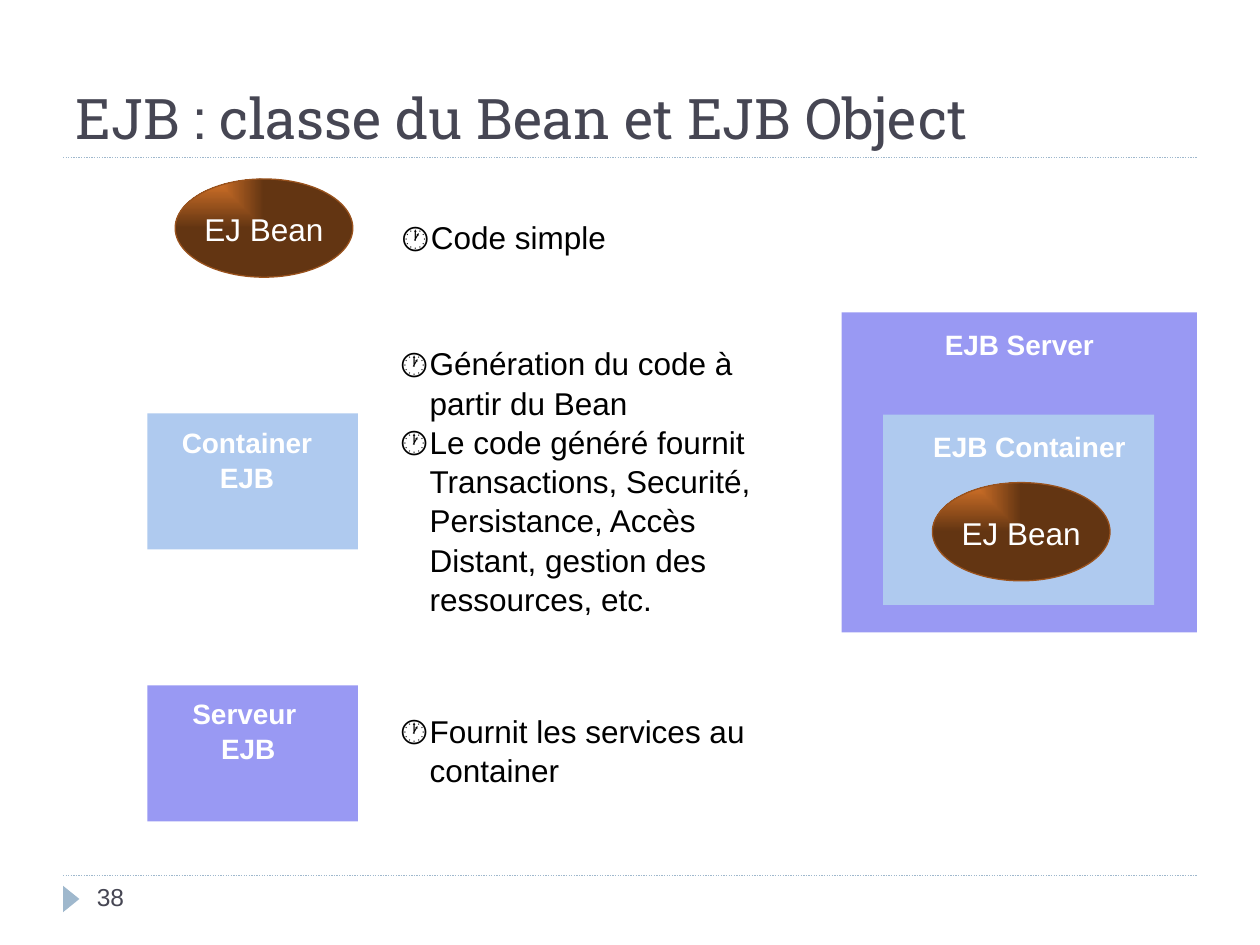
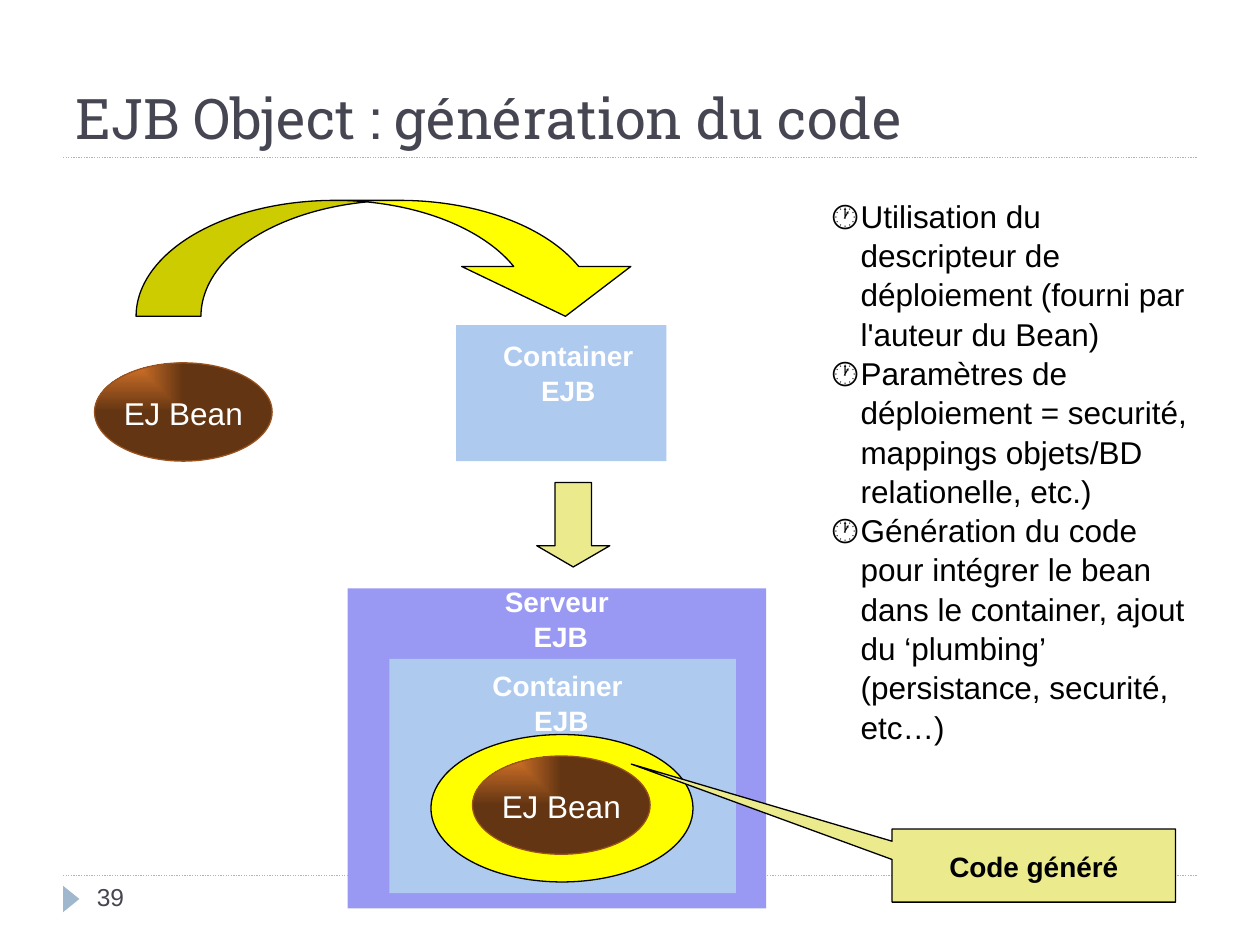
from lxml import etree
from pptx import Presentation
from pptx import util as u
from pptx.dml.color import RGBColor
from pptx.enum import dml, shapes, text
from pptx.oxml import ns

HUE = {
    "rule": "9FB8CD", "title": "464653", "black": "000000", "white": "FFFFFF",
    "server": "9999F3", "box": "AFCAEF", "glow": "D77429", "bean": "633512",
    "rim": "99521D", "yellow": "FFFF00", "cream": "EBEB8D",
}
FORM = shapes.MSO_SHAPE
ALIGN = text.PP_ALIGN
ANCHOR = text.MSO_ANCHOR
RGB = {name: RGBColor.from_string(code) for name, code in HUE.items()}

prs = Presentation()
prs.slide_width = u.Inches(10)
prs.slide_height = u.Inches(7.5)
COLS = 100
CELL = prs.slide_width / COLS


def grid(*cells):
    return [u.Emu(round(cell * CELL)) for cell in cells]


def write(shape, words, size, ink, bold=False, align=ALIGN.LEFT,
          anchor=ANCHOR.TOP, face="Arial", wrap=True, lead=1.0):
    frame = shape.text_frame
    frame.text = words
    frame.word_wrap = wrap
    frame.auto_size = text.MSO_AUTO_SIZE.NONE
    frame.vertical_anchor = anchor
    for para in frame.paragraphs:
        para.alignment = align
        para.line_spacing = lead
        para.space_before = u.Pt(0)
        for run in para.runs:
            run.font.name = face
            run.font.size = u.Pt(size)
            run.font.bold = bold
            run.font.color.rgb = RGB[ink]


BEAN = (14.1, 7.8)
BOX = (16.7, 10.8)
LIST = 31.6

pages = [
    {
        "layout": 4,
        "title": "EJB : classe du Bean et EJB Object",
        "lists": [
            ((30.9, 16.7, 18.7, 4), ["Code simple"]),
            ((30.8, 26.7, LIST, 23.7), [
                "Génération du code à partir du Bean",
                "Le code généré fournit Transactions, Securité, Persistance, "
                "Accès Distant, gestion des ressources, etc."]),
            ((30.8, 55.9, LIST, 7), ["Fournit les services au container"]),
        ],
        "forms": [
            (FORM.RECTANGLE, (66.8, 24.8, 28.2, 25.4), "server", None, []),
            (FORM.RECTANGLE, (70.1, 32.9, 21.5, 15.1), "box", None, []),
            (FORM.RECTANGLE, (11.7, 32.8, *BOX), "box", None, []),
            (FORM.RECTANGLE, (11.7, 54.4, *BOX), "server", None, []),
        ],
        "labels": [
            ((73.1, 25.4, 15.6, 3.6), "EJB Server"),
            ((72.5, 33.5, 18.4, 3.6), "EJB Container"),
            ((12.5, 33.2, 14.2, 6.3), "Container EJB"),
            ((14.2, 54.7, 10.4, 6.3), "Serveur\v EJB"),
        ],
        "beans": [(74, 38.3), (13.9, 14.2)],
        "notes": [],
    },
    {
        "layout": 1,
        "title": "EJB Object : génération du code",
        "lists": [
            ((65, 15, LIST, 40.5), [
                "Utilisation du descripteur de déploiement "
                "(fourni par l'auteur du Bean)",
                "Paramètres de déploiement = securité, "
                "mappings objets/BD relationelle, etc.)",
                "Génération du code pour intégrer le bean dans le container, "
                "ajout du ‘plumbing’ (persistance, securité, etc…)"]),
        ],
        "forms": [
            (FORM.RECTANGLE, (27.6, 46.7, 33.2, 25.4), "server", None, []),
            (FORM.RECTANGLE, (30.9, 52.3, 27.5, 18.6), "box", None, []),
            (FORM.OVAL, (34.2, 58.3, 20.8, 11.7), "yellow", "black", []),
            (FORM.RECTANGLE, (36.2, 25.8, *BOX), "box", None, []),
            (FORM.DOWN_ARROW, (42.6, 38.3, 5.8, 6.7), "cream", "black",
             [0.5, 0.29]),
            (FORM.CURVED_DOWN_ARROW, (10.8, 15.9, 40.8, 9.2), "yellow", "black",
             [0.56, 1.46, 0.43]),
        ],
        "labels": [
            ((35, 45.8, 18.4, 6.3), "Serveur\n EJB"),
            ((32.5, 52.5, 23.5, 6.3), "Container\n EJB"),
            ((38, 26.3, 14.2, 6.3), "Container EJB"),
        ],
        "beans": [(37.5, 60), (7.5, 28.8)],
        "notes": [((70.8, 65.8, 22.5, 5.8), "Code généré", [-1.42, -1.39])],
    },
]

for num, page in enumerate(pages, 38):
    slide = prs.slides.add_slide(prs.slide_layouts[page["layout"]])
    draw = slide.shapes

    for row in (12.5, 69.5):
        rule = draw.add_connector(shapes.MSO_CONNECTOR.STRAIGHT,
                                  *grid(5, row, 95, row))
        rule.line.color.rgb = RGB["rule"]
        rule.line.width = u.Pt(0.75)
        rule.line.dash_style = dml.MSO_LINE.ROUND_DOT
        etree.SubElement(rule.element.spPr, ns.qn("a:effectLst"))

    mark = draw.add_shape(FORM.ISOSCELES_TRIANGLE, *grid(4.6, 70.7, 2.1, 1.3))
    mark.rotation = 90
    mark.shadow.inherit = False
    mark.fill.solid()
    mark.fill.fore_color.rgb = RGB["rule"]
    mark.line.fill.background()

    foot = draw.add_textbox(*grid(6.7, 69.5, 21.7, 4))
    write(foot, str(num), 14, "title")

    head = draw.title
    head.left, head.top, head.width, head.height = grid(5, 2.5, 90, 10)
    write(head, page["title"], 32, "title", anchor=ANCHOR.BOTTOM,
          face="Roboto Slab")

    slots = [slot for slot in slide.placeholders
             if slot.placeholder_format.idx > 0]
    for slot, (area, items) in zip(slots, page["lists"]):
        slot.left, slot.top, slot.width, slot.height = grid(*area)
        write(slot, "\n".join(items), 18, "black", lead=1.04)
        for para in slot.text_frame.paragraphs:
            props = para._p.get_or_add_pPr()
            props.set("marL", str(u.Inches(0.23)))
            props.set("indent", str(-u.Inches(0.23)))
            etree.SubElement(props, ns.qn("a:buFont"), typeface="Arial")
            etree.SubElement(props, ns.qn("a:buChar"), char="🕐")
    for slot in slots[len(page["lists"]):]:
        slot.element.getparent().remove(slot.element)

    for kind, area, fill, edge, bends in page["forms"]:
        form = draw.add_shape(kind, *grid(*area))
        form.shadow.inherit = False
        form.fill.solid()
        form.fill.fore_color.rgb = RGB[fill]
        if edge:
            form.line.color.rgb = RGB[edge]
            form.line.width = u.Pt(0.75)
        else:
            form.line.fill.background()
        for pos, bend in enumerate(bends):
            form.adjustments[pos] = bend

    for area, words in page["labels"]:
        label = draw.add_textbox(*grid(*area))
        write(label, words, 16, "white", True, ALIGN.CENTER, lead=1.04)

    for spot in page["beans"]:
        bean = draw.add_shape(FORM.OVAL, *grid(*spot, *BEAN))
        bean.shadow.inherit = False
        bean.fill.gradient()
        for stop, hue, place in zip(bean.fill.gradient_stops,
                                    ("glow", "bean"), (0, 1)):
            stop.color.rgb = RGB[hue]
            stop.position = place
        grad = bean.element.spPr.find(ns.qn("a:gradFill"))
        sweep = etree.Element(ns.qn("a:path"), {"path": "rect"})
        etree.SubElement(sweep, ns.qn("a:fillToRect"), r="100000", b="100000")
        grad.replace(grad.find(ns.qn("a:lin")), sweep)
        bean.line.color.rgb = RGB["rim"]
        bean.line.width = u.Pt(0.75)
        write(bean, "EJ Bean", 18, "white", align=ALIGN.CENTER,
              anchor=ANCHOR.MIDDLE, wrap=False, lead=1.04)

    for area, words, tip in page["notes"]:
        note = draw.add_shape(FORM.RECTANGULAR_CALLOUT, *grid(*area))
        note.shadow.inherit = False
        note.adjustments[0], note.adjustments[1] = tip
        note.fill.solid()
        note.fill.fore_color.rgb = RGB["cream"]
        note.line.color.rgb = RGB["black"]
        note.line.width = u.Pt(0.75)
        write(note, words, 16, "black", True, ALIGN.CENTER, ANCHOR.MIDDLE,
              wrap=False, lead=1.04)

prs.save("out.pptx")
